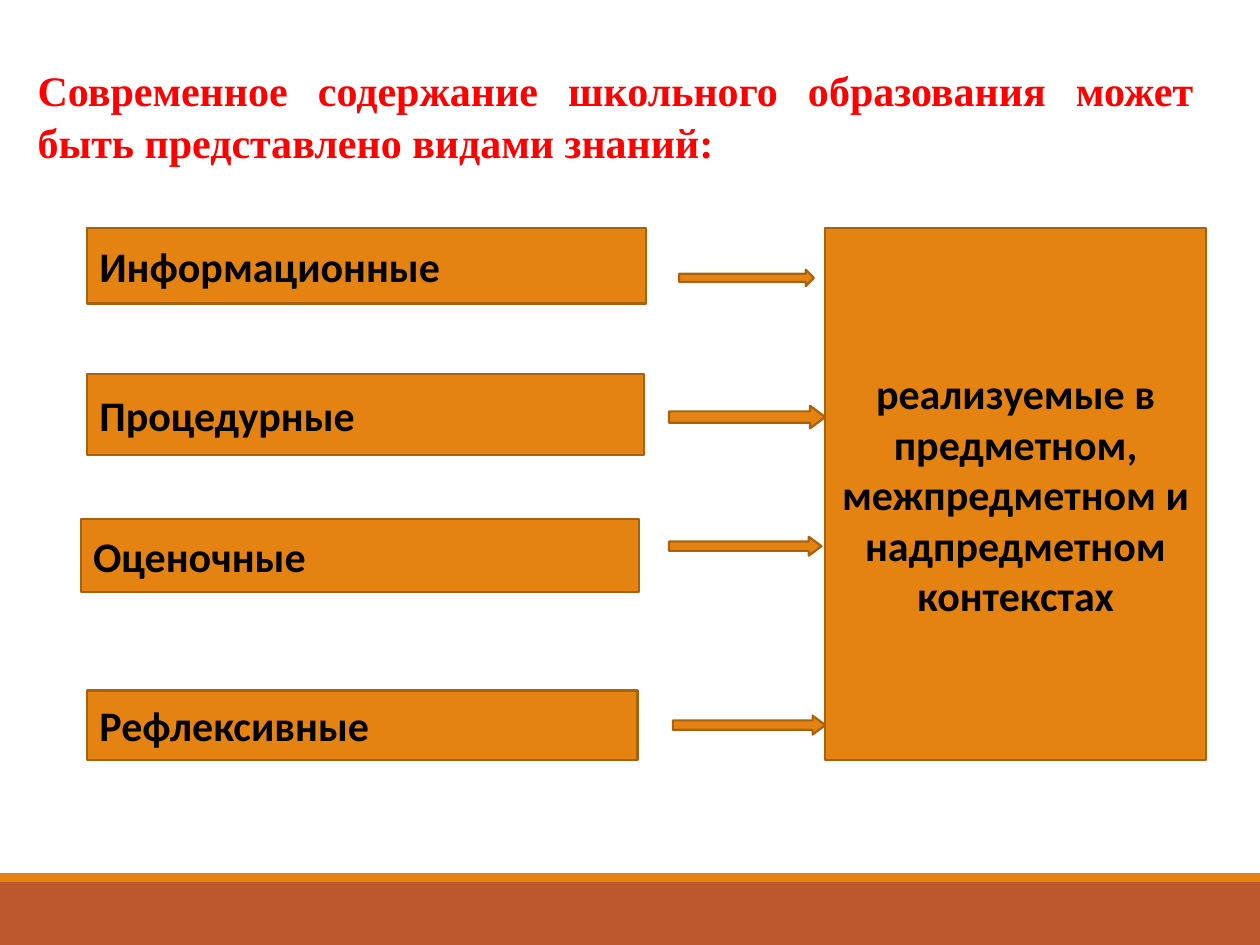
"""Build a slide linking four kinds of school knowledge to their contexts."""
import dataclasses

import pptx
import pptx.dml.color
import pptx.enum.shapes
import pptx.enum.text
import pptx.util

Inches = pptx.util.Inches
Align = pptx.enum.text.PP_ALIGN
Anchor = pptx.enum.text.MSO_ANCHOR
Shape = pptx.enum.shapes.MSO_SHAPE


@dataclasses.dataclass(frozen=True)
class Theme:
    """Hold the colours, fonts and type sizes of the slide."""
    orange: str = "E48312"
    outline: str = "A9610D"
    rust: str = "BD582C"
    red: str = "FF0000"
    black: str = "000000"
    title_font: str = "Times New Roman"
    body_font: str = "Calibri"
    text_size: float = 24
    line_width: float = 1.25


THEME = Theme()

KNOWLEDGE_BOXES = [
    ("Информационные", (0.69, 1.81, 4.44, 0.6)),
    ("Процедурные", (0.69, 2.97, 4.42, 0.64)),
    ("Оценочные", (0.64, 4.12, 4.43, 0.58)),
    ("Рефлексивные", (0.69, 5.48, 4.37, 0.55)),
]
ARROWS = [
    ((5.39, 2.14, 1.07, 0.13), 0.5),
    ((5.31, 3.22, 1.24, 0.18), 0.67),
    ((5.31, 4.26, 1.21, 0.15), 0.67),
    ((5.34, 5.68, 1.21, 0.15), 0.67),
]


def color(value):
    """Return an RGB colour from its hex value."""
    return pptx.dml.color.RGBColor.from_string(value)


def apply_format(target, values):
    """Set each attribute in the dict on the target."""
    for name, value in values.items():
        setattr(target, name, value)


def write_text(box, text, font, ink, frame_format, para_format):
    """Write one bold paragraph into a box."""
    apply_format(box.text_frame, {"word_wrap": True, **frame_format})
    para = box.text_frame.paragraphs[0]
    apply_format(para, para_format)
    span = para.add_run()
    span.text = text
    apply_format(span.font, {"name": font, "bold": True,
                             "size": pptx.util.Pt(THEME.text_size)})
    span.font.color.rgb = color(ink)


def add_block(page, kind, place, fill, outline=None):
    """Add a filled preset shape with an optional outline."""
    block = page.shapes.add_shape(kind, *map(Inches, place))
    block.shadow.inherit = False
    block.fill.solid()
    block.fill.fore_color.rgb = color(fill)
    if outline:
        block.line.color.rgb = color(outline)
        block.line.width = pptx.util.Pt(THEME.line_width)
    else:
        block.line.fill.background()
    return block


def add_title(page, text, place):
    """Add the justified heading."""
    box = page.shapes.add_textbox(*map(Inches, place))
    write_text(box, text, THEME.title_font, THEME.red,
               {"vertical_anchor": Anchor.TOP},
               {"alignment": Align.JUSTIFY, "line_spacing": 1.05})


def add_label_box(page, text, place, alignment=Align.LEFT):
    """Add an outlined rectangle with a label."""
    box = add_block(page, Shape.RECTANGLE, place, THEME.orange, THEME.outline)
    write_text(box, text, THEME.body_font, THEME.black,
               {"vertical_anchor": Anchor.MIDDLE}, {"alignment": alignment})


def add_arrow(page, place, head_length):
    """Add a block arrow pointing right."""
    arrow = add_block(page, Shape.RIGHT_ARROW, place, THEME.orange, THEME.outline)
    arrow.adjustments[1] = head_length


def main():
    """Build and save the deck."""
    deck = pptx.Presentation()
    apply_format(deck, {"slide_width": Inches(10), "slide_height": Inches(7.5)})
    page = deck.slides.add_slide(deck.slide_layouts[6])
    add_block(page, Shape.RECTANGLE, (0, 7, 10, 0.5), THEME.rust)
    add_block(page, Shape.RECTANGLE, (0, 6.93, 10, 0.07), THEME.orange)
    add_title(page, "Современное содержание школьного образования может "
              "быть представлено видами знаний:", (0.2, 0.44, 9.37, 3.74))
    for text, place in KNOWLEDGE_BOXES:
        add_label_box(page, text, place)
    for place, head_length in ARROWS:
        add_arrow(page, place, head_length)
    add_label_box(page, "реализуемые в предметном, межпредметном и "
                  "надпредметном контекстах", (6.55, 1.81, 3.02, 4.22),
                  Align.CENTER)
    deck.save("out.pptx")


if __name__ == "__main__":
    main()
